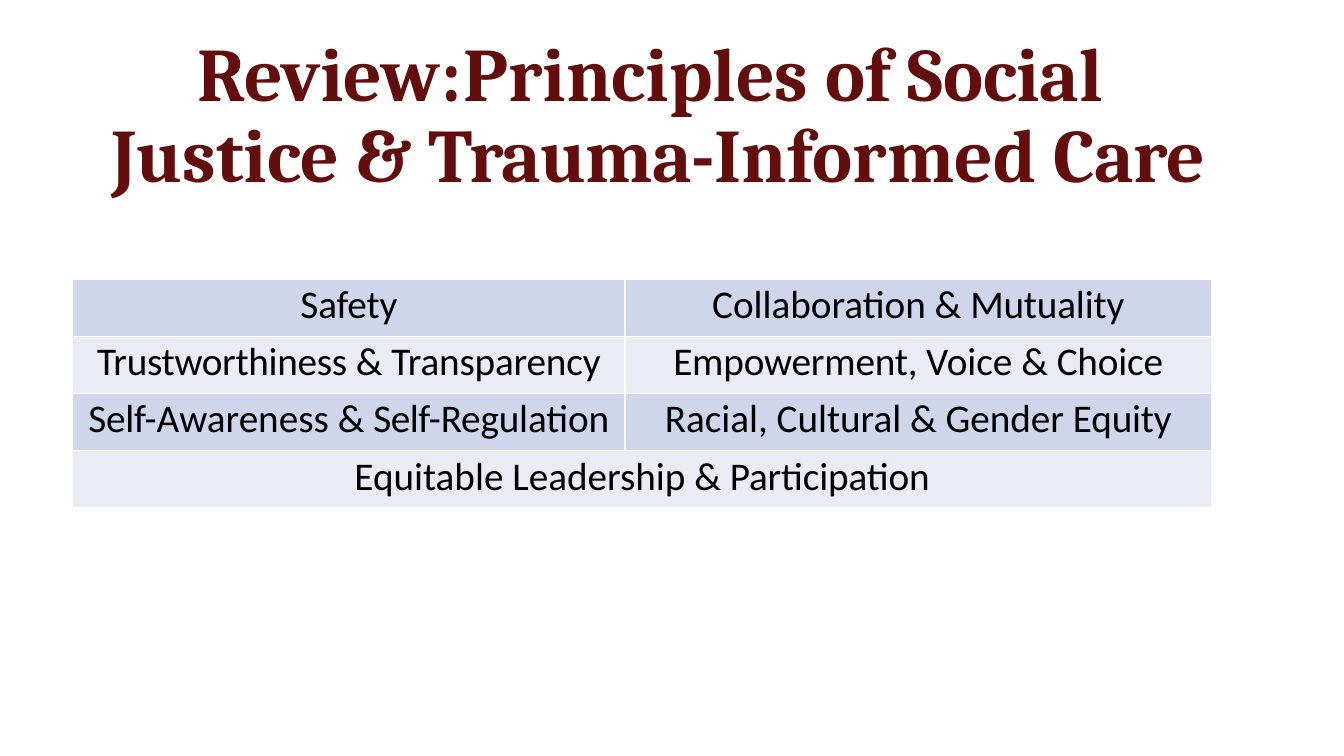
from lxml.etree import SubElement
from pptx import Presentation
from pptx.dml.color import RGBColor
from pptx.enum.text import MSO_ANCHOR, PP_ALIGN
from pptx.oxml.ns import qn
from pptx.util import Cm, Pt

MAROON = RGBColor(0x64, 0x0D, 0x0D)
BLACK = RGBColor(0, 0, 0)
BAND_FILLS = (RGBColor(0xCF, 0xD5, 0xEA), RGBColor(0xE9, 0xEB, 0xF5))

TITLE_FORMAT = {"name": "Cambria", "size": Pt(54), "bold": True}
CELL_FORMAT = {"name": "Calibri", "size": Pt(28), "bold": False}


def add_runs(paragraph, runs, font_format, color):
    """Add (text, letter spacing in hundredths of a point) runs."""
    for text, spacing in runs:
        run = paragraph.add_run()
        run.text = text
        for attribute, value in font_format.items():
            setattr(run.font, attribute, value)
        run.font.color.rgb = color
        run._r.get_or_add_rPr().set("spc", str(spacing))


def add_white_borders(cell):
    properties = cell._tc.get_or_add_tcPr()
    for side in ("lnL", "lnR", "lnT", "lnB"):
        line = SubElement(properties, qn(f"a:{side}"), w=str(Pt(1)))
        fill = SubElement(line, qn("a:solidFill"))
        SubElement(fill, qn("a:srgbClr"), val="FFFFFF")


presentation = Presentation()
presentation.slide_width, presentation.slide_height = Cm(33.87), Cm(19.05)
slide = presentation.slides.add_slide(presentation.slide_layouts[6])

# Title: indented first line, tab after "Review:"
title = slide.shapes.add_textbox(Cm(2.77), Cm(0.61), Cm(28.32), Cm(4.39))
frame = title.text_frame
frame.word_wrap = True
frame.margin_left = frame.margin_right = frame.margin_bottom = 0
frame.margin_top = Cm(0.3)
paragraph = frame.paragraphs[0]
paragraph.line_spacing = Pt(57.8)
properties = paragraph._p.get_or_add_pPr()
properties.set("marL", str(Cm(0.03)))
properties.set("indent", str(Cm(2.18)))
tabs = SubElement(properties, qn("a:tabLst"))
SubElement(tabs, qn("a:tab"), pos=str(Cm(10.16)), algn="l")
add_runs(paragraph, [
    ("Review:", -10), ("\tPrinciples of ", 0), ("Social ", -10),
    ("Justice & ", 0), ("Trauma-", -60), ("Informed ", 0), ("Care", -20),
], TITLE_FORMAT, MAROON)

# Table of principles; the last row spans both columns
PRINCIPLES = [
    [[("Safety", -10)],
     [("Collaboration & ", 0), ("Mutuality", -10)]],
    [[("Trustworthiness ", -20), ("& ", 0), ("Transparency", -10)],
     [("Empowerment, ", -10), ("Voice & ", 0), ("Choice", -10)]],
    [[("Self-", -20), ("Awareness & ", 0), ("Self-", -30), ("Regulation", -10)],
     [("Racial, Cultural & Gender ", 0), ("Equity", -10)]],
    [[("Equitable Leadership & ", 0), ("Participation", -10)], []],
]
COLUMN_WIDTHS = (Cm(13.92), Cm(14.78))
ROW_HEIGHT = Cm(1.44)

table = slide.shapes.add_table(
    len(PRINCIPLES), len(COLUMN_WIDTHS), Cm(1.83), Cm(7.04),
    sum(COLUMN_WIDTHS), ROW_HEIGHT * len(PRINCIPLES)).table
table.first_row = table.horz_banding = False
for column, width in zip(table.columns, COLUMN_WIDTHS):
    column.width = width
table.cell(3, 0).merge(table.cell(3, 1))

for row_index, row in enumerate(PRINCIPLES):
    table.rows[row_index].height = ROW_HEIGHT
    for column_index, runs in enumerate(row):
        cell = table.cell(row_index, column_index)
        cell.margin_left = cell.margin_right = cell.margin_bottom = 0
        cell.margin_top = Cm(0.05)
        cell.vertical_anchor = MSO_ANCHOR.TOP
        add_white_borders(cell)
        cell.fill.solid()
        cell.fill.fore_color.rgb = BAND_FILLS[row_index % 2]
        paragraph = cell.text_frame.paragraphs[0]
        paragraph.alignment = PP_ALIGN.CENTER
        add_runs(paragraph, runs, CELL_FORMAT, BLACK)

presentation.save("out.pptx")
